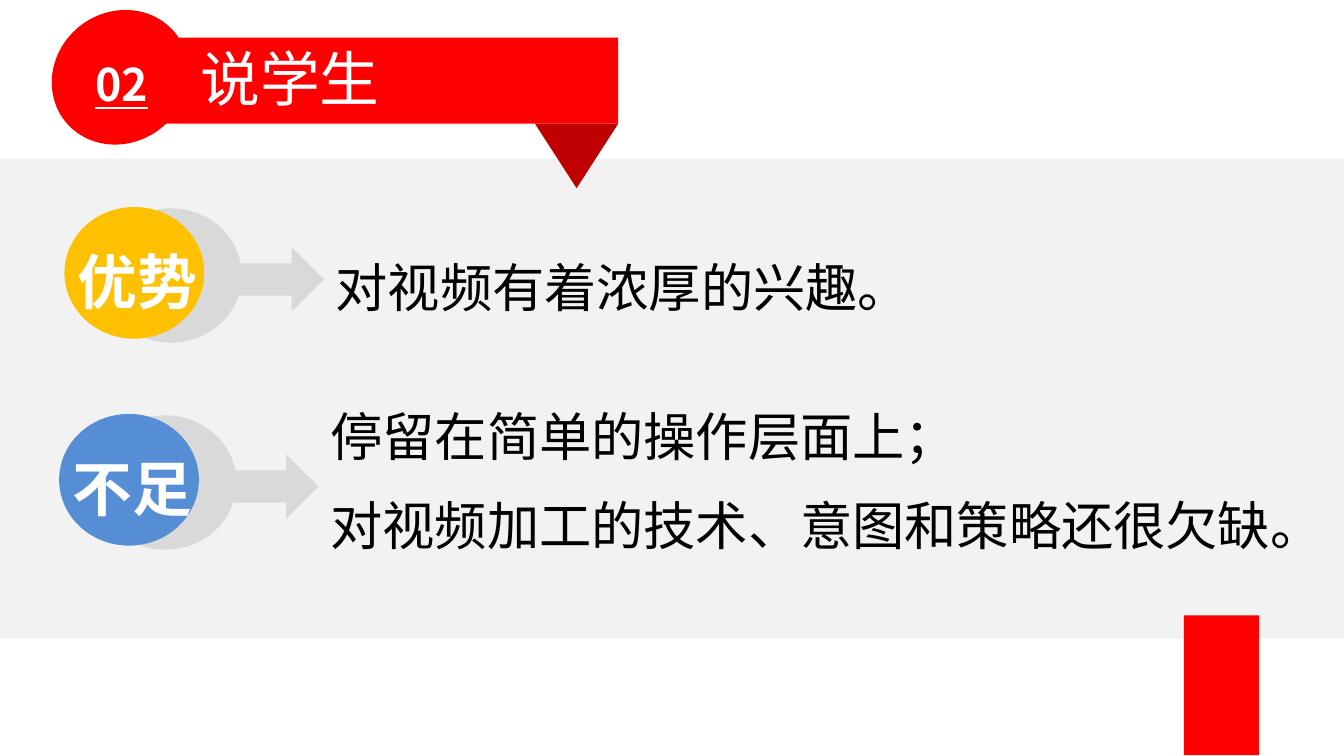
import dataclasses

import lxml.etree
import pptx
import pptx.dml.color
import pptx.enum.shapes
import pptx.enum.text
import pptx.oxml.ns
import pptx.util

Inches = pptx.util.Inches
Pt = pptx.util.Pt
Kind = pptx.enum.shapes.MSO_SHAPE

FONT = "Noto Sans CJK SC"
COLORS = {
    "white": "FFFFFF",
    "black": "000000",
    "band": "F2F2F2",
    "shade": "D9D9D9",
    "red": "FF0000",
    "dark": "C00000",
    "gold": "FFC000",
    "blue": "558ED5",
}


@dataclasses.dataclass
class Box:
    left: float
    top: float
    width: float
    height: float


@dataclasses.dataclass
class Topic:
    label: str
    color: str
    left: float
    top: float


def rgb(name: str):
    return pptx.dml.color.RGBColor.from_string(COLORS[name])


def place(shape, box: Box) -> None:
    shape.left, shape.top = Inches(box.left), Inches(box.top)
    shape.width, shape.height = Inches(box.width), Inches(box.height)


def draw(slide, kind, box: Box, color: str, turn: float = 0):
    shape = slide.shapes.add_shape(kind, 0, 0, 0, 0)
    place(shape, box)
    shape.rotation = turn
    shape.shadow.inherit = False
    shape.fill.solid()
    shape.fill.fore_color.rgb = rgb(color)
    shape.line.fill.background()
    return shape


def write(shape, lines: list[str], size: float, color: str, bold: bool = False,
          under: bool = False, space: float = 1, gap: float = 0,
          wrap: bool = False) -> None:
    """Fill a text box or placeholder with plain, left-aligned lines."""
    frame = shape.text_frame
    frame.text = "\n".join(lines)
    frame.word_wrap = wrap
    frame.auto_size = pptx.enum.text.MSO_AUTO_SIZE.NONE
    frame.vertical_anchor = pptx.enum.text.MSO_ANCHOR.TOP
    for rank, para in enumerate(frame.paragraphs):
        para.alignment = pptx.enum.text.PP_ALIGN.LEFT
        para.line_spacing = space
        para.space_before = Pt(gap if rank else 0)
        props = para._p.get_or_add_pPr()
        props.set("marL", "0")
        props.set("indent", "0")
        lxml.etree.SubElement(props, pptx.oxml.ns.qn("a:buNone"))
        font = para.font
        font.size, font.bold, font.underline = Pt(size), bold, under
        font.color.rgb = rgb(color)
        font.name = FONT
        east = lxml.etree.SubElement(font._rPr, pptx.oxml.ns.qn("a:ea"))
        east.set("typeface", FONT)


def add_text(slide, box: Box, text: str, size: float, color: str, **style) -> None:
    shape = slide.shapes.add_textbox(0, 0, 0, 0)
    place(shape, box)
    write(shape, [text], size, color, **style)


def add_topic(slide, topic: Topic) -> None:
    x, y = topic.left, topic.top
    draw(slide, Kind.RIGHT_ARROW, Box(x + 1.12, y + 0.3, 0.81, 0.48), "shade")
    draw(slide, Kind.OVAL, Box(x + 0.26, y + 0.01, 1.06, 1), "shade")
    draw(slide, Kind.OVAL, Box(x, y, 1.04, 0.98), topic.color)
    add_text(slide, Box(x, y + 0.23, 1.1, 0.64), topic.label, 32, "white", bold=True)


def add_header(slide) -> None:
    badge = draw(slide, Kind.OVAL_CALLOUT, Box(0.37, 0.09, 1.05, 0.97), "red", 321.4)
    badge.adjustments[0], badge.adjustments[1] = 0.21, 0.62
    add_text(slide, Box(0.61, 0.37, 0.62, 0.5), "02", 24, "white",
             bold=True, under=True)
    draw(slide, Kind.RECTANGLE, Box(1.19, 0.28, 3.41, 0.64), "red")
    draw(slide, Kind.ISOSCELES_TRIANGLE, Box(3.98, 0.92, 0.62, 0.48), "dark", 180)


def main() -> None:
    deck = pptx.Presentation()
    deck.slide_width, deck.slide_height = Inches(10), Inches(10 * 9 / 16)
    slide = deck.slides.add_slide(deck.slide_layouts[1])
    title, body = slide.placeholders

    draw(slide, Kind.RECTANGLE, Box(0, 1.18, 10, 3.57), "band")
    draw(slide, Kind.RECTANGLE, Box(8.81, 4.58, 0.56, 1.04), "red")

    for topic in (Topic("优势", "gold", 0.48, 1.54), Topic("不足", "blue", 0.44, 3.08)):
        add_topic(slide, topic)
    add_text(slide, Box(2.4, 1.76, 7.56, 0.67), "对视频有着浓厚的兴趣。",
             28, "black", space=1.2, wrap=True)
    place(body, Box(2.36, 2.96, 8.55, 1.28))
    write(body, ["停留在简单的操作层面上；", "对视频加工的技术、意图和策略还很欠缺。"],
          28, "black", gap=14, wrap=True)

    add_header(slide)
    place(title, Box(1.39, 0.26, 1.55, 0.64))
    write(title, ["说学生"], 32, "white")

    # Bring the placeholders in front of the band and the ribbon
    for holder in (body, title):
        slide.shapes._spTree.append(holder._element)

    deck.save("out.pptx")


if __name__ == "__main__":
    main()
